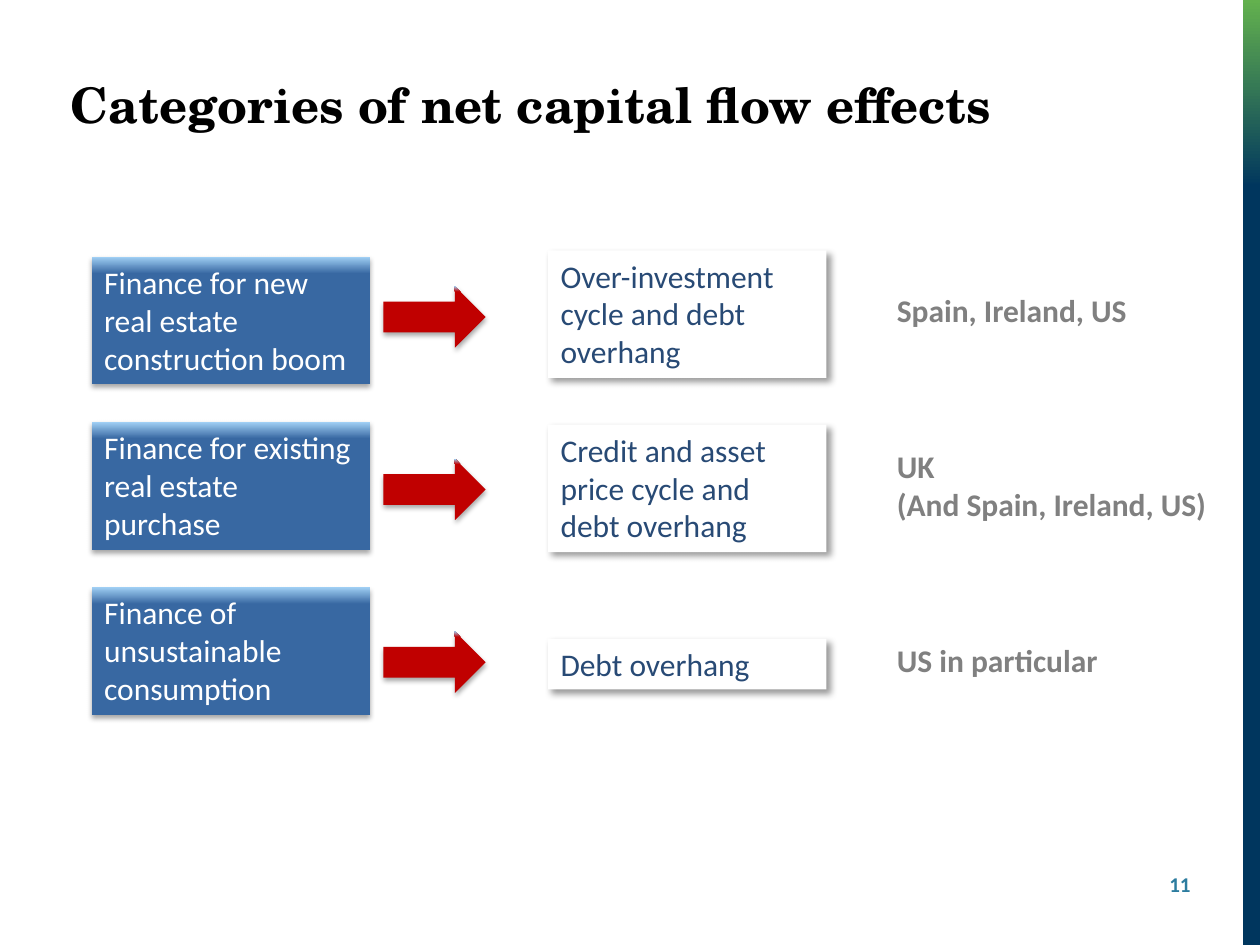
from dataclasses import dataclass

from lxml import etree
from pptx import Presentation
from pptx import util as u
from pptx.dml.color import RGBColor
from pptx.enum import shapes, text
from pptx.oxml import ns

Cm, Pt = u.Cm, u.Pt


@dataclass(frozen=True)
class Theme:
    head: str = "TeX Gyre Schola"
    body: str = "Calibri"
    big: int = 28
    mid: int = 18
    small: int = 12
    black: str = "000000"
    white: str = "FFFFFF"
    green: str = "63B14E"
    navy: str = "00365E"
    blue: str = "3868A2"
    sky: str = "A0CFF4"
    red: str = "C00000"
    ink: str = "284A75"
    grey: str = "808080"
    teal: str = "2C7C9F"


T = Theme()

# Shadows: opacity %, blur pt, distance pt, direction in degrees
DROP = (35, 3.1, 1.8, 90)
SIDE = (40, 4, 3, 45)

# Cause, top of effect, height of effect, effect, top, width and height of cases, cases
ROWS = [
    ("Finance for new real estate construction boom",
     5.05, 2.57, "Over-investment cycle and debt overhang",
     5.74, 5.18, 1.02, ["Spain, Ireland, US"]),
    ("Finance for existing real estate purchase",
     8.56, 2.57, "Credit and asset price cycle and debt overhang",
     8.89, 6.81, 1.8, ["UK", "(And Spain, Ireland, US)"]),
    ("Finance of unsustainable consumption",
     12.88, 1.02, "Debt overhang",
     12.8, 4.6, 1.02, ["US in particular"]),
]


def paint(fill, stops, angle):
    """Fill with one colour, or blend two (position, colour) stops."""
    if isinstance(stops, str):
        fill.solid()
        fill.fore_color.rgb = RGBColor.from_string(stops)
        return
    fill.gradient()
    fill.gradient_angle = angle
    for stop, (pos, tint) in zip(fill.gradient_stops, stops):
        stop.position = pos
        stop.color.rgb = RGBColor.from_string(tint)


def shade(shape, alpha, blur, dist, turn):
    """Give the shape an outer shadow."""
    node = shape._element.spPr.find(ns.qn("a:effectLst"))
    outer = etree.SubElement(
        node, ns.qn("a:outerShdw"), blurRad=str(Pt(blur)), dist=str(Pt(dist)),
        dir=str(turn * 60000), algn="ctr", rotWithShape="0")
    tint = etree.SubElement(outer, ns.qn("a:srgbClr"), val=T.black)
    etree.SubElement(tint, ns.qn("a:alpha"), val=str(alpha * 1000))


def block(slide, kind, area, stops, angle=90, shadow=None):
    """Add a filled shape without outline."""
    shape = slide.shapes.add_shape(kind, *map(Cm, area))
    paint(shape.fill, stops, angle)
    shape.line.fill.background()
    shape.shadow.inherit = False
    if shadow:
        shade(shape, *shadow)
    return shape


def write(shape, lines, size, tint, font=T.body, bold=False, wrap=True,
          align=text.PP_ALIGN.LEFT, anchor=text.MSO_ANCHOR.TOP):
    """Put lines of text into a shape, one paragraph each."""
    frame = shape.text_frame
    frame.word_wrap = wrap
    frame.vertical_anchor = anchor
    frame.text = "\n".join(lines)
    for para in frame.paragraphs:
        para.alignment = align
        para.font.name = font
        para.font.size = Pt(size)
        para.font.bold = bold
        para.font.color.rgb = RGBColor.from_string(tint)


def label(slide, area, lines, size, tint, **style):
    """Add a text box."""
    write(slide.shapes.add_textbox(*map(Cm, area)), lines, size, tint, **style)


def row(slide, index, cause, top, high, effect, y, wide, tall, cases):
    """Add cause, arrow, effect and cases."""
    rect = shapes.MSO_SHAPE.RECTANGLE
    box = block(slide, rect, (1.85, 5.18 + 3.33 * index, 5.61, 2.57),
                [(0.87, T.blue), (1, T.sky)], shadow=DROP)
    write(box, [cause], T.mid, T.white)
    block(slide, shapes.MSO_SHAPE.RIGHT_ARROW,
          (7.73, 5.77 + 3.48 * index, 2.06, 1.24),
          [(0.91, T.red), (1, T.sky)], shadow=DROP)
    box = block(slide, rect, (11.05, top, 5.61, high), T.white, shadow=SIDE)
    write(box, [effect], T.mid, T.ink)
    label(slide, (17.83, y, wide, tall), cases, T.mid, T.grey,
          bold=True, wrap=False)


def main():
    deck = Presentation()
    deck.slide_width, deck.slide_height = Cm(25.4), Cm(19.05)
    slide = deck.slides.add_slide(deck.slide_layouts[6])

    # Side band
    rect = shapes.MSO_SHAPE.RECTANGLE
    block(slide, rect, (25.06, 0, 0.38, 3.84),
          [(0, T.green), (0.99, T.navy)], angle=270)
    block(slide, rect, (25.06, 3.71, 0.38, 15.67), T.navy)

    # Title
    label(slide, (1.17, 1.8, 22.86, 0.58),
          ["Categories of net capital flow effects"], T.big, T.black,
          font=T.head, bold=True, anchor=text.MSO_ANCHOR.MIDDLE)

    # Rows of causes and effects
    for index, parts in enumerate(ROWS):
        row(slide, index, *parts)

    # Page number
    label(slide, (23.01, 17.45, 1.24, 1.02), ["11"], T.small, T.teal,
          bold=True, align=text.PP_ALIGN.RIGHT)

    deck.save("out.pptx")


if __name__ == "__main__":
    main()
